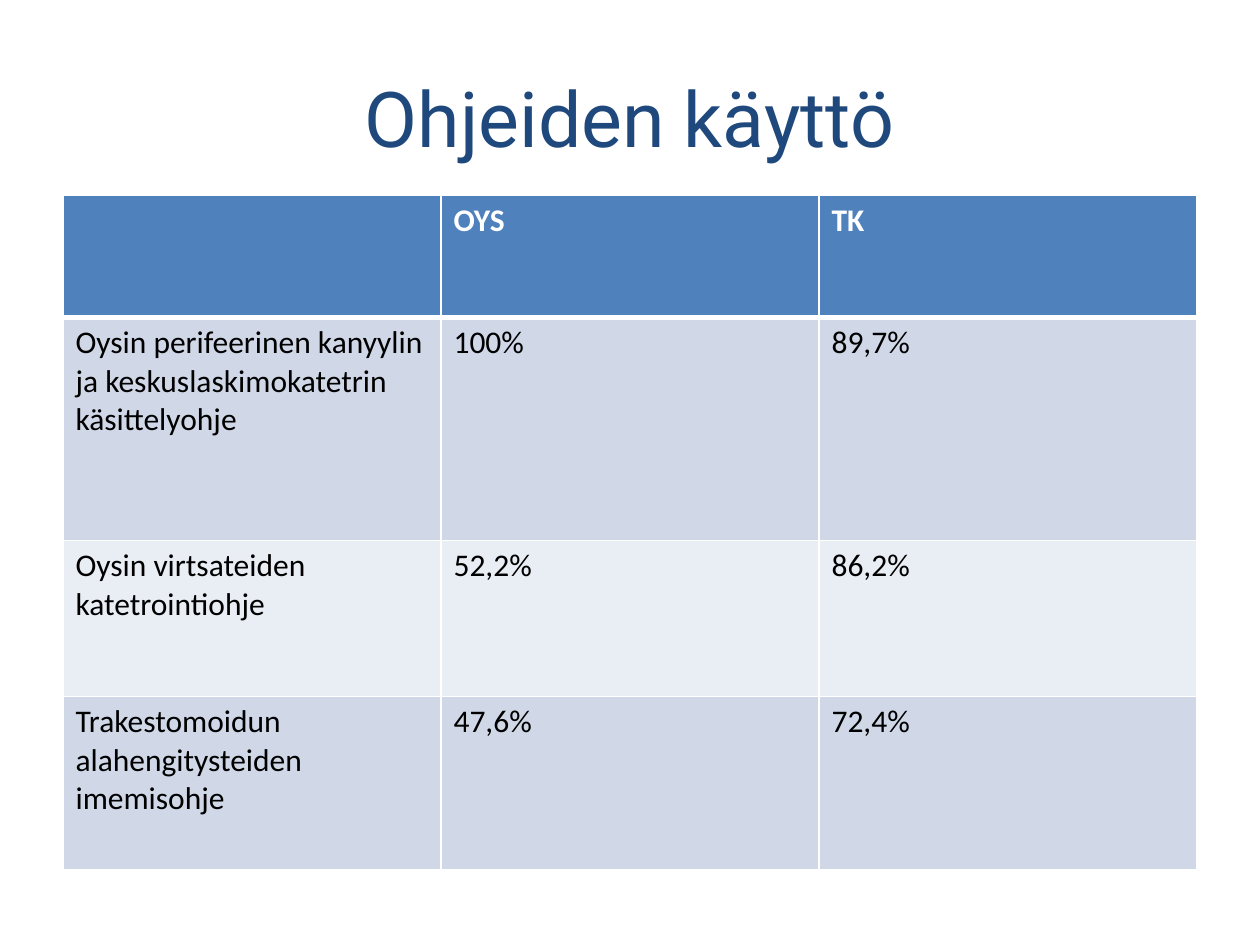
import pptx
import pptx.dml.color
import pptx.enum.text
import pptx.oxml
import pptx.oxml.ns
import pptx.util

Inches = pptx.util.Inches
Pt = pptx.util.Pt

COLORS = {
    "title": "1F497D",
    "header": "4F81BD",
    "odd": "D0D8E8",
    "even": "E9EDF4",
    "text": "000000",
    "white": "FFFFFF",
}

ROWS = [
    ("", "OYS", "TK"),
    ("Oysin perifeerinen kanyylin ja keskuslaskimokatetrin käsittelyohje", "100%", "89,7%"),
    ("Oysin virtsateiden katetrointiohje", "52,2%", "86,2%"),
    ("Trakestomoidun alahengitysteiden imemisohje", "47,6%", "72,4%"),
]
ROW_HEIGHTS = [0.97, 1.77, 1.24, 1.37]
COLUMN_WIDTH = 3


def rgb(name):
    return pptx.dml.color.RGBColor.from_string(COLORS[name])


def add_run(p, text, font, size, color, bold=False):
    r = p.add_run()
    r.text = text
    r.font.name = font
    r.font.size = Pt(size)
    r.font.bold = bold
    r.font.color.rgb = rgb(color)


def add_title(slide, text):
    sp = slide.shapes.add_textbox(Inches(0.5), Inches(0.3), Inches(9), Inches(1.25))
    tf = sp.text_frame
    tf.word_wrap = True
    tf.vertical_anchor = pptx.enum.text.MSO_ANCHOR.MIDDLE
    p = tf.paragraphs[0]
    p.alignment = pptx.enum.text.PP_ALIGN.CENTER
    add_run(p, text, "Roboto", 44, "title")


def set_borders(cell, top, bottom):
    tc_pr = cell._tc.get_or_add_tcPr()
    for side, width in (("L", 1), ("R", 1), ("T", top), ("B", bottom)):
        tc_pr.append(pptx.oxml.parse_xml(
            f'<a:ln{side} {pptx.oxml.ns.nsdecls("a")} w="{Pt(width)}">'
            f'<a:solidFill><a:srgbClr val="{COLORS["white"]}"/></a:solidFill>'
            f'</a:ln{side}>'
        ))


def fill_cell(cell, text, row):
    header = row == 0
    set_borders(cell, top=3 if row == 1 else 1, bottom=3 if header else 1)
    cell.fill.solid()
    cell.fill.fore_color.rgb = rgb("header" if header else "odd" if row % 2 else "even")
    if text:
        p = cell.text_frame.paragraphs[0]
        add_run(p, text, "Calibri", 18, "white" if header else "text", header)


def add_usage_table(slide):
    columns = len(ROWS[0])
    table = slide.shapes.add_table(
        len(ROWS), columns, Inches(0.5), Inches(1.55),
        Inches(COLUMN_WIDTH * columns), Inches(sum(ROW_HEIGHTS)),
    ).table
    for column in table.columns:
        column.width = Inches(COLUMN_WIDTH)
    for i, (values, height) in enumerate(zip(ROWS, ROW_HEIGHTS)):
        table.rows[i].height = Inches(height)
        for j, text in enumerate(values):
            fill_cell(table.cell(i, j), text, i)


def main():
    prs = pptx.Presentation()
    prs.slide_width = Inches(10)
    prs.slide_height = Inches(7.5)
    slide = prs.slides.add_slide(prs.slide_layouts[6])
    add_title(slide, "Ohjeiden käyttö")
    add_usage_table(slide)
    prs.save("out.pptx")


if __name__ == "__main__":
    main()
